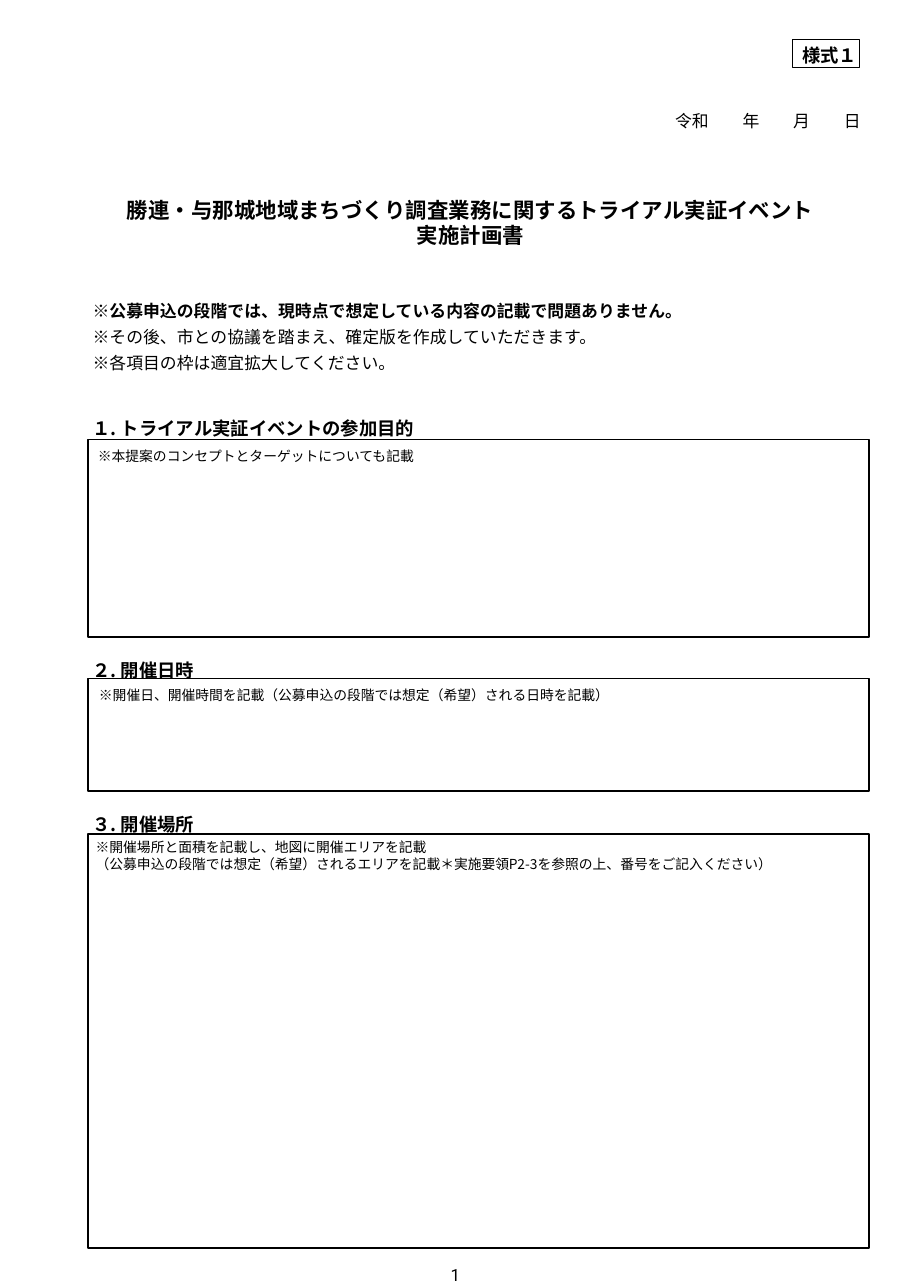
import pptx
import pptx.dml.color
import pptx.enum.shapes
import pptx.enum.text
import pptx.oxml.ns
import pptx.util
from lxml import etree
from pptx.util import Inches

COLORS = {"ink": "000000"}
JAPANESE = "Noto Sans CJK JP"
LATIN = "Roboto"
FRAME_LEFT, FRAME_WIDTH = 0.8, 7.09
HEADING_LEFT, HEADING_WIDTH = 0.74, 7.06

# heading, heading top, frame top, frame height, caption left, caption top, caption lines
SECTIONS = [
    ("１. トライアル実証イベントの参加目的", 3.74, 3.99, 1.79, 0.79, 4.01,
     ["※本提案のコンセプトとターゲットについても記載"]),
    ("２. 開催日時", 5.94, 6.16, 1.02, 0.8, 6.18,
     ["※開催日、開催時間を記載（公募申込の段階では想定（希望）される日時を記載）"]),
    ("３. 開催場所", 7.34, 7.57, 3.76, 0.77, 7.56,
     ["※開催場所と面積を記載し、地図に開催エリアを記載",
      "（公募申込の段階では想定（希望）されるエリアを記載＊実施要領P2-3を参照の上、番号をご記入ください）"]),
]


def ink():
    return pptx.dml.color.RGBColor.from_string(COLORS["ink"])


def place(shape, left, top, width, height):
    shape.left, shape.top = Inches(left), Inches(top)
    shape.width, shape.height = Inches(width), Inches(height)


def format_span(span, size, bold, font, tracking):
    span.font.size = pptx.util.Pt(size)
    span.font.bold = bold
    span.font.color.rgb = ink()
    span.font.name = font
    properties = span.font._element
    east_asian = etree.SubElement(properties, pptx.oxml.ns.qn("a:ea"))
    east_asian.set("typeface", font)
    if tracking:
        properties.set("spc", str(round(tracking * 100)))


def write(shape, lines, size, spacing, bold=False, font=JAPANESE, tracking=0,
          align=pptx.enum.text.PP_ALIGN.LEFT, margins=(0.1, 0.05)):
    frame = shape.text_frame
    frame.text = "\n".join(lines)
    frame.word_wrap = True
    frame.auto_size = pptx.enum.text.MSO_AUTO_SIZE.NONE
    frame.vertical_anchor = pptx.enum.text.MSO_ANCHOR.TOP
    frame.margin_left, frame.margin_top = Inches(margins[0]), Inches(margins[1])
    frame.margin_right = frame.margin_bottom = 0
    if align == pptx.enum.text.PP_ALIGN.CENTER:
        frame.margin_right = frame.margin_left
    for para in frame.paragraphs:
        para.alignment = align
        para.line_spacing = pptx.util.Pt(spacing)
        para.space_before = pptx.util.Pt(0)
        for span in para.runs:
            format_span(span, size, bold, font, tracking)


def add_text(page, left, top, width, height, lines, size, spacing, **style):
    box = page.shapes.add_textbox(0, 0, 0, 0)
    place(box, left, top, width, height)
    write(box, lines, size, spacing, **style)


def add_frame(page, left, top, width, height, line_width):
    frame = page.shapes.add_shape(
        pptx.enum.shapes.MSO_SHAPE.RECTANGLE,
        Inches(left), Inches(top), Inches(width), Inches(height))
    frame.shadow.inherit = False
    frame.fill.background()
    frame.line.color.rgb = ink()
    frame.line.width = pptx.util.Pt(line_width)
    return frame


def remove_bullets(shape):
    for para in shape.text_frame.paragraphs:
        properties = para._p.get_or_add_pPr()
        properties.set("marL", "0")
        properties.set("indent", "0")
        etree.SubElement(properties, pptx.oxml.ns.qn("a:buNone"))


def add_section(page, heading, heading_top, frame_top, frame_height,
                caption_left, caption_top, caption):
    add_text(page, HEADING_LEFT, heading_top, HEADING_WIDTH, 0.25, [heading], 12, 14, bold=True)
    add_frame(page, FRAME_LEFT, frame_top, FRAME_WIDTH, frame_height, 1)
    add_text(page, caption_left, caption_top, HEADING_WIDTH, 0.1 + 0.15 * len(caption),
             caption, 9, 11)


def main():
    deck = pptx.Presentation()
    deck.slide_width, deck.slide_height = Inches(8.26), Inches(11.69)
    page = deck.slides.add_slide(deck.slide_layouts[1])

    # Title
    title = page.shapes.title
    place(title, HEADING_LEFT, 1.74, HEADING_WIDTH, 0.6)
    write(title, ["勝連・与那城地域まちづくり調査業務に関するトライアル実証イベント", "実施計画書"],
          14, 16.4, bold=True, align=pptx.enum.text.PP_ALIGN.CENTER)

    # Notes for applicants
    notes = page.placeholders[1]
    place(notes, HEADING_LEFT, 2.63, HEADING_WIDTH, 0.82)
    write(notes, ["※公募申込の段階では、現時点で想定している内容の記載で問題ありません。",
                  "※その後、市との協議を踏まえ、確定版を作成していただきます。",
                  "※各項目の枠は適宜拡大してください。"], 11, 17)
    remove_bullets(notes)
    notes.text_frame.paragraphs[0].runs[0].font.bold = True

    # Form label and date
    label = add_frame(page, 7.19, 0.36, 0.61, 0.25, 0.48)
    write(label, ["様式１"], 12, 14, bold=True, tracking=-0.2, margins=(0.09, 0.05))
    add_text(page, 6.03, 0.96, 1.9, 0.29, ["令和　　年　　月　　日"], 11, 13)

    # Form sections
    for section in SECTIONS:
        add_section(page, *section)

    # Page number
    add_text(page, 4.05, 11.48, 0.18, 0.2, ["1"], 11, 12.9, font=LATIN,
             tracking=-0.5, margins=(0.04, 0))

    deck.save("out.pptx")


if __name__ == "__main__":
    main()
